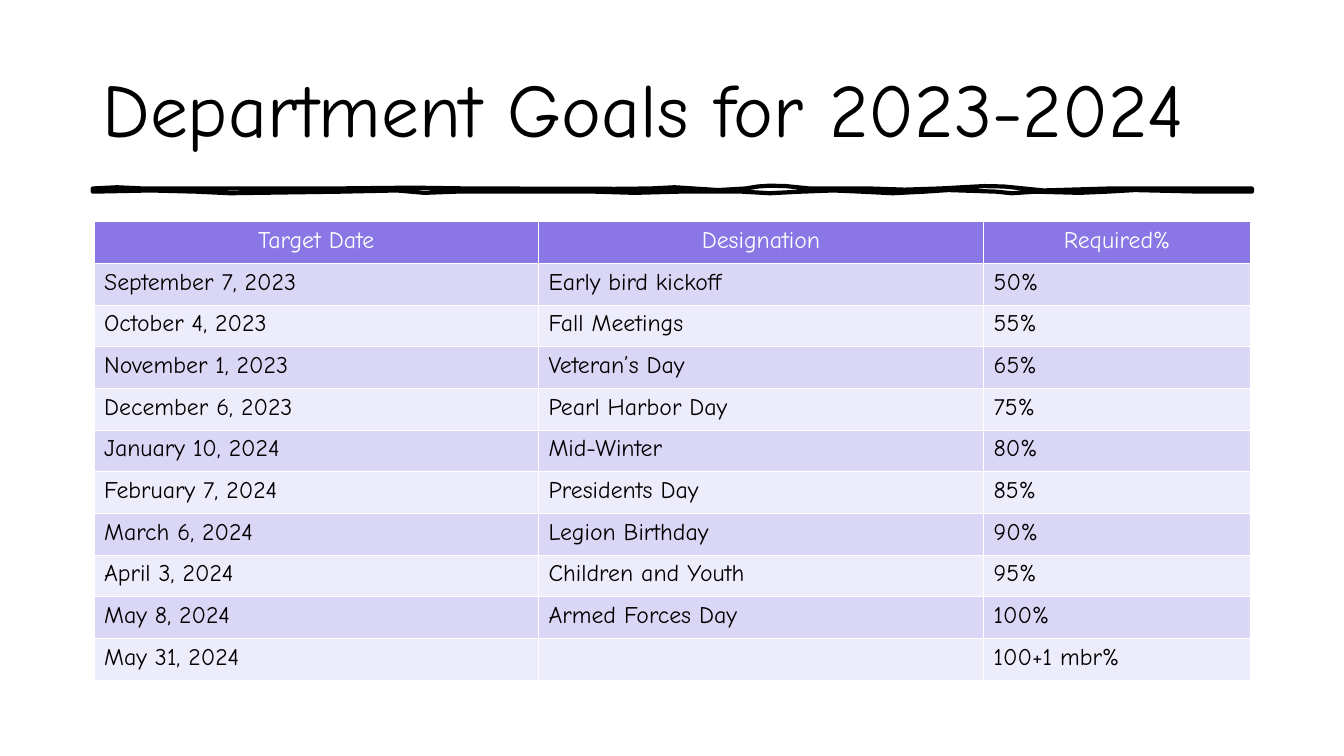
from dataclasses import dataclass

from pptx import Presentation
from pptx.dml.color import RGBColor
from pptx.enum import text as t
from pptx.util import Cm, Pt


@dataclass(frozen=True)
class Theme:
    font: str = "Comic Neue"
    ink: str = "000000"
    white: str = "FFFFFF"
    head: str = "8A77E5"
    bands: tuple = ("DAD6F5", "EDECFA")
    title: int = 54
    body: int = 17
    rule: int = 3


THEME = Theme()

GOALS = [
    ("Target Date", "Designation", "Required%"),
    ("September 7, 2023", "Early bird kickoff", "50%"),
    ("October 4, 2023", "Fall Meetings", "55%"),
    ("November 1, 2023", "Veteran’s Day", "65%"),
    ("December 6, 2023", "Pearl Harbor Day", "75%"),
    ("January 10, 2024", "Mid-Winter", "80%"),
    ("February 7, 2024", "Presidents Day", "85%"),
    ("March 6, 2024", "Legion Birthday", "90%"),
    ("April 3, 2024", "Children and Youth", "95%"),
    ("May 8, 2024", "Armed Forces Day", "100%"),
    ("May 31, 2024", "", "100+1 mbr%"),
]
WIDTHS = (11.2, 11.22, 6.73)
ROW = 1.05

# Edges of the hand-drawn rule, in cm
UPPER = [
    (2.34, 4.75), (2.95, 4.72), (3.6, 4.75), (8.46, 4.75), (10.4, 4.73),
    (11.8, 4.75), (15.5, 4.76), (16.4, 4.75), (17, 4.72), (18.1, 4.79),
    (18.8, 4.75), (19.1, 4.7), (19.4, 4.68), (19.8, 4.69), (20.4, 4.75),
    (21.9, 4.75), (22.8, 4.78), (23.7, 4.75), (24.8, 4.69), (25.3, 4.7),
    (25.8, 4.75), (26.3, 4.8), (28, 4.75), (31.55, 4.75),
]
LOWER = [
    (31.55, 4.83), (30.3, 4.83), (28.6, 4.79), (27.9, 4.83), (27.2, 4.86),
    (26.1, 4.83), (25.5, 4.87), (25.1, 4.83), (23.9, 4.79), (23.3, 4.83),
    (22.5, 4.87), (21.7, 4.83), (21, 4.8), (20.2, 4.83), (19.4, 4.87),
    (18.7, 4.83), (17.1, 4.83), (16, 4.86), (15, 4.83), (11.5, 4.83),
    (10.7, 4.86), (10, 4.8), (8.6, 4.83), (5.8, 4.87), (4.95, 4.83),
    (3.8, 4.8), (2.34, 4.83),
]


def rgb(tint):
    return RGBColor.from_string(tint)


def write(frame, words, size=THEME.body, tint=THEME.ink,
          align=t.PP_ALIGN.LEFT, space=1.0):
    para = frame.paragraphs[0]
    para.alignment = align
    para.line_spacing = space
    run = para.add_run()
    run.text = words
    font = run.font
    font.name, font.size, font.bold = THEME.font, Pt(size), False
    font.color.rgb = rgb(tint)


def add_title(slide, words):
    title = slide.shapes.title
    title.left, title.top = Cm(2.33), Cm(1.01)
    title.width, title.height = Cm(29.21), Cm(3.68)
    title.text_frame.vertical_anchor = t.MSO_ANCHOR.MIDDLE
    write(title.text_frame, words, size=THEME.title, space=0.9)


def add_rule(slide):
    dots = [(Cm(x), Cm(y)) for x, y in UPPER + LOWER]
    pen = slide.shapes.build_freeform(*dots[0])
    pen.add_line_segments(dots[1:], close=True)
    rule = pen.convert_to_shape()
    rule.shadow.inherit = False
    rule.fill.background()
    rule.line.color.rgb = rgb(THEME.ink)
    rule.line.width = Pt(THEME.rule)


def add_goals(slide):
    frame = slide.shapes.add_table(
        len(GOALS), len(WIDTHS), Cm(2.37), Cm(5.59),
        Cm(sum(WIDTHS)), Cm(ROW * len(GOALS)))
    table = frame.table
    for col, width in zip(table.columns, WIDTHS):
        col.width = Cm(width)
    for i, goal in enumerate(GOALS):
        table.rows[i].height = Cm(ROW)
        for j, words in enumerate(goal):
            cell = table.cell(i, j)
            cell.fill.solid()
            if i == 0:
                cell.fill.fore_color.rgb = rgb(THEME.head)
                write(cell.text_frame, words, tint=THEME.white,
                      align=t.PP_ALIGN.CENTER)
            else:
                cell.fill.fore_color.rgb = rgb(THEME.bands[(i - 1) % 2])
                if words:
                    write(cell.text_frame, words)


def main():
    deck = Presentation()
    deck.slide_width, deck.slide_height = Cm(33.87), Cm(19.05)
    slide = deck.slides.add_slide(deck.slide_layouts[5])
    # Heading
    add_rule(slide)
    add_title(slide, "Department Goals for 2023-2024")
    # Goals by date
    add_goals(slide)
    deck.save("out.pptx")


if __name__ == "__main__":
    main()
